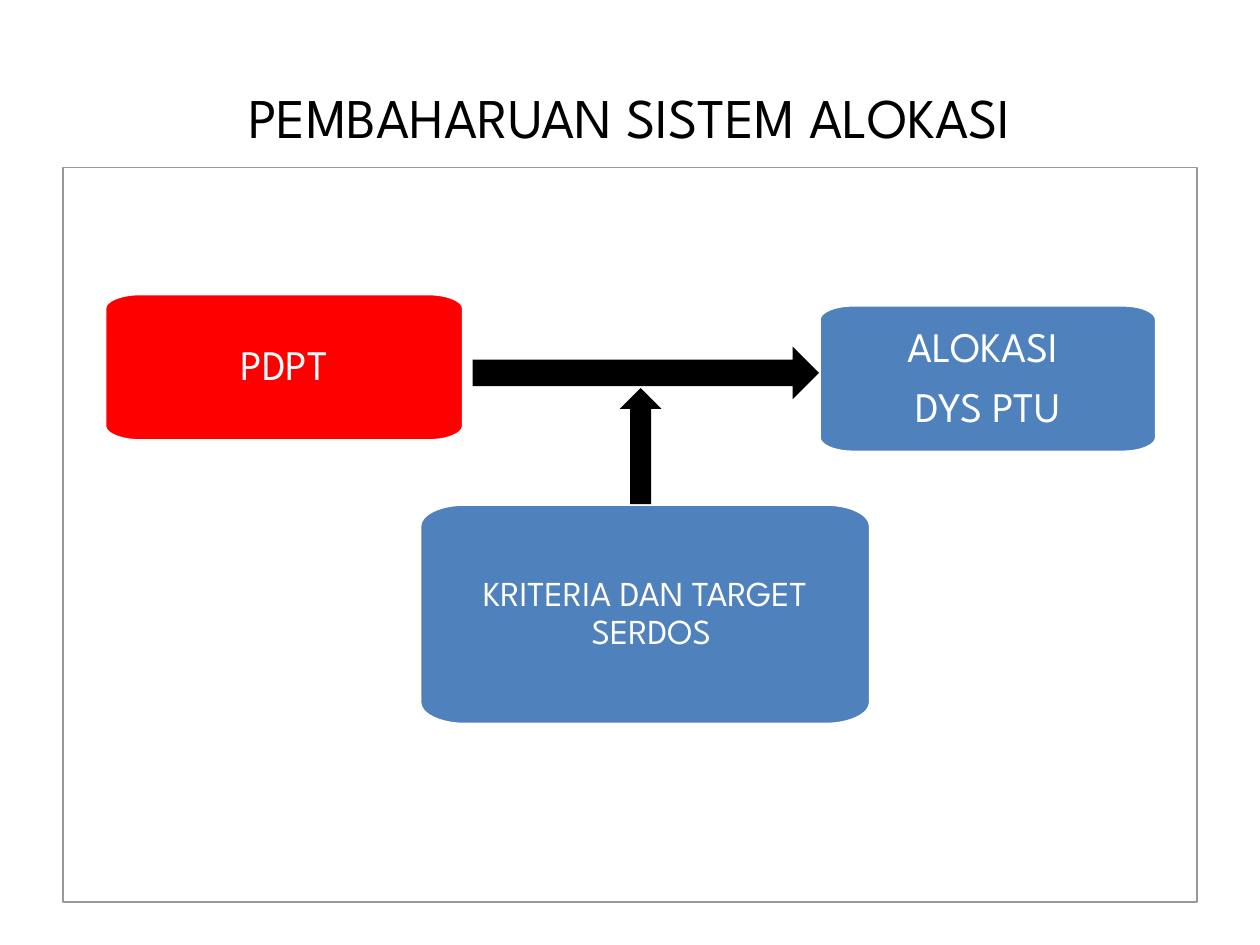
from math import cos, pi, sin, tan

from lxml import etree
from pptx import Presentation
from pptx.dml.color import RGBColor
from pptx.enum.shapes import MSO_SHAPE
from pptx.enum.text import MSO_ANCHOR, PP_ALIGN
from pptx.oxml.ns import qn
from pptx.util import Inches, Pt

RECTANGLE = MSO_SHAPE.RECTANGLE
RIGHT_ARROW = MSO_SHAPE.RIGHT_ARROW
UP_ARROW = MSO_SHAPE.UP_ARROW
MIDDLE = MSO_ANCHOR.MIDDLE
CENTER = PP_ALIGN.CENTER

FONT = "League Spartan"
COLORS = {"black": "000000", "white": "FFFFFF", "frame": "999999",
          "blue": "4F81BD", "red": "FF0000"}
CORNER = 0.1
ARC = pi / 4
HANDLE = 4 / 3 * tan(ARC / 4)
CORNER_POINTS = 6


def color(name):
    return RGBColor.from_string(COLORS[name])


def paint(shape, fill=None, line=None, width=0):
    shape.shadow.inherit = False
    if fill:
        shape.fill.solid()
        shape.fill.fore_color.rgb = color(fill)
    else:
        shape.fill.background()
    if line:
        shape.line.color.rgb = color(line)
        shape.line.width = Pt(width)
    else:
        shape.line.fill.background()


def write(shape, lines, size, ink, inset=None, spacing=None):
    frame = shape.text_frame
    frame.word_wrap = True
    frame.vertical_anchor = MIDDLE
    if inset is not None:
        for side in ("left", "top", "right", "bottom"):
            setattr(frame, f"margin_{side}", Inches(inset))
    for index, line in enumerate(lines):
        paragraph = frame.add_paragraph() if index else frame.paragraphs[0]
        for key, value in {"alignment": CENTER, **(spacing or {})}.items():
            setattr(paragraph, key, value)
        run = paragraph.add_run()
        run.text = line
        for key, value in {"name": FONT, "size": Pt(size)}.items():
            setattr(run.font, key, value)
        run.font.color.rgb = color(ink)


def add_title(slide, box, text):
    title = slide.shapes.add_textbox(*map(Inches, box))
    write(title, [text], 32, "black")


def add_preset(slide, box, preset, **style):
    shape = slide.shapes.add_shape(preset, *map(Inches, box))
    paint(shape, **style)


def rounded_outline(left, top, width, height):
    rx, ry = CORNER * width, CORNER * height
    right, bottom = left + width, top + height
    centers = [(left + rx, top + ry), (right - rx, top + ry),
               (right - rx, bottom - ry), (left + rx, bottom - ry)]

    def point(center, angle, handle):
        x = cos(angle) - handle * sin(angle)
        y = sin(angle) + handle * cos(angle)
        return Inches(center[0] + rx * x), Inches(center[1] + ry * y)

    points = [point(centers[0], pi, 0)]
    for quarter, center in enumerate(centers):
        if quarter:
            points.append(point(center, pi + quarter * pi / 2, 0))
        for half in range(2):
            begin = pi + quarter * pi / 2 + half * ARC
            end = begin + ARC
            points += [point(center, begin, HANDLE), point(center, end, -HANDLE),
                       point(center, end, 0)]
    return points


def curve_corners(shape):
    segments = list(shape.element.iter(qn("a:lnTo")))
    for corner in range(0, len(segments), CORNER_POINTS + 1):
        for first in (corner, corner + CORNER_POINTS // 2):
            curve = etree.Element(qn("a:cubicBezTo"))
            segments[first].addprevious(curve)
            for segment in segments[first:first + 3]:
                curve.append(segment[0])
                segment.getparent().remove(segment)


def add_node(slide, box, lines, fill, size=24, space_after=8.4, hanging=None):
    start, *rest = rounded_outline(*box)
    builder = slide.shapes.build_freeform(*start)
    builder.add_line_segments(rest, close=True)
    node = builder.convert_to_shape()
    curve_corners(node)
    paint(node, fill, "white", 2)
    write(node, lines, size, "white", 0.17,
          {"line_spacing": 0.9, "space_after": Pt(space_after)})
    if hanging:
        properties = node.text_frame.paragraphs[0].element.get_or_add_pPr() \
            if hasattr(node.text_frame.paragraphs[0], "element") \
            else node.text_frame.paragraphs[0]._p.get_or_add_pPr()
        for key, value in zip(("marL", "indent"), hanging):
            properties.set(key, str(Inches(value)))


def add_allocation_flow(slide, box):
    left, top, width, height = box
    add_preset(slide, box, RECTANGLE, line="frame", width=0.75)
    add_node(slide, (left + 2.83, top + 2.67, 3.58, 1.75),
             ["KRITERIA DAN TARGET SERDOS"], "blue", 20, 6, (0.1, -0.5))
    add_node(slide, (left + 6, top + 1.09, 2.68, 1.17),
             ["ALOKASI ", "DYS PTU"], "blue")
    add_node(slide, (left + 0.33, top + 1, 2.85, 1.17), ["PDPT"], "red")
    add_preset(slide, (left + 3.25, top + 1.42, 2.75, 0.42), RIGHT_ARROW, fill="black")
    add_preset(slide, (left + 4.42, top + 1.75, 0.33, 0.92), UP_ARROW, fill="black")


def main():
    deck = Presentation()
    deck.slide_width = Inches(10)
    deck.slide_height = Inches(7.5)
    slide = deck.slides.add_slide(deck.slide_layouts[6])
    add_title(slide, (0.5, 0.3, 9, 1.25), "PEMBAHARUAN SISTEM ALOKASI")
    add_allocation_flow(slide, (0.5, 1.33, 9, 5.83))
    deck.save("out.pptx")


if __name__ == "__main__":
    main()
